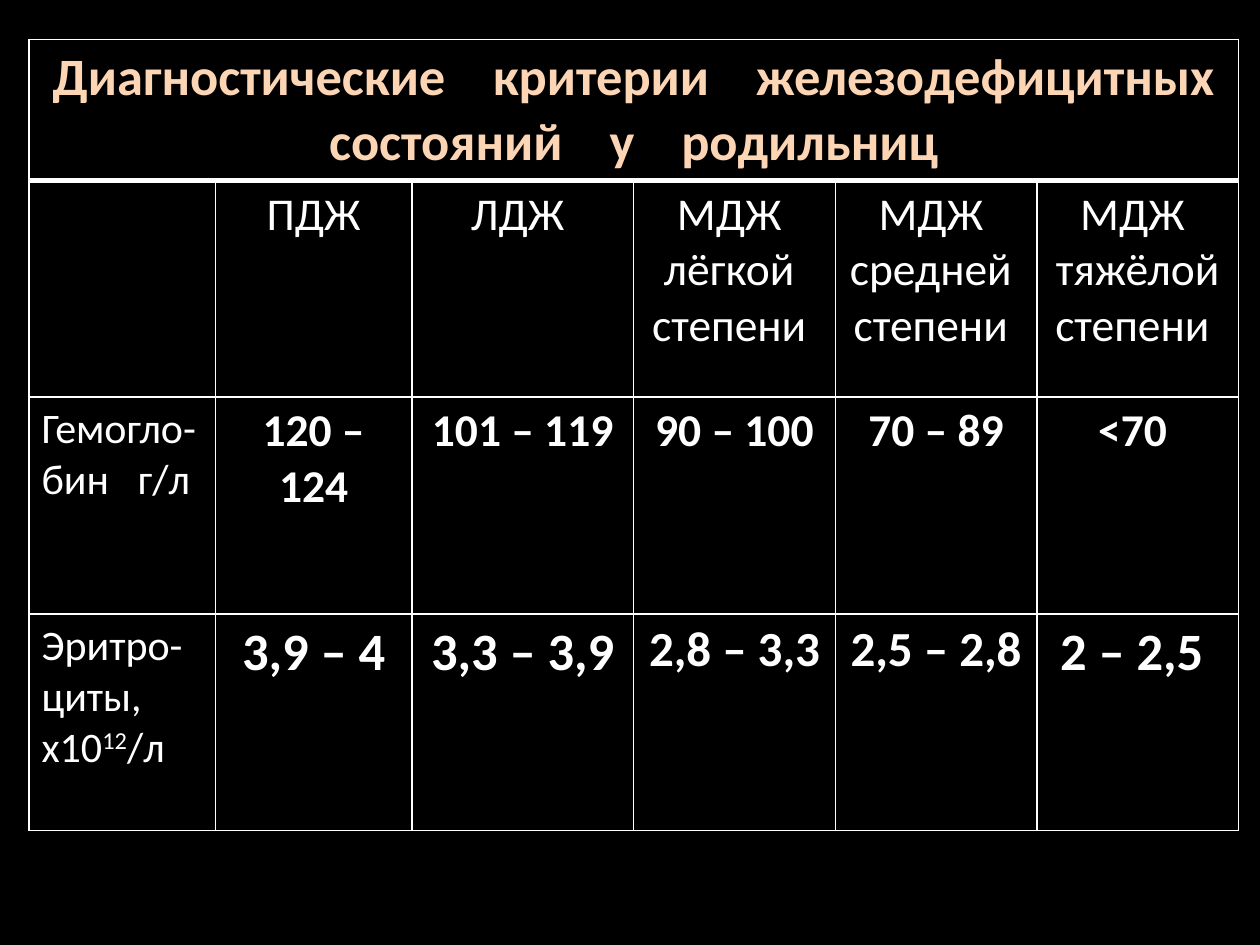
from lxml.etree import SubElement
from pptx import Presentation
from pptx.dml.color import RGBColor
from pptx.enum.text import PP_ALIGN
from pptx.oxml import parse_xml
from pptx.oxml.ns import nsdecls
from pptx.util import Inches, Pt

COLORS = {"back": "000000", "text": "FFFFFF", "title": "FCD5B5"}
TITLE = "Диагностические критерии железодефицитных состояний у родильниц"
HEADS = ["", " ПДЖ ", "ЛДЖ ", "МДЖ \nлёгкой \nстепени ",
         "МДЖ \nсредней \nстепени ", "МДЖ \nтяжёлой\nстепени "]
ROWS = [
    ([("Гемогло-бин", {}), (" ", {"spc": "1100"}), ("г/л", {})],
     ["120 –124", "101 – 119", "90 – 100", "70 – 89", "<70 "], [26] * 5),
    ([("Эритро-циты, х10", {}), ("12", {"baseline": "30000"}), ("/л", {})],
     ["3,9 – 4", "3,3 – 3,9", "2,8 – 3,3", "2,5 – 2,8", "2 – 2,5 "],
     [30, 30, 28, 28, 30]),
]
COLS = [1.48, 1.56, 1.76, 1.6, 1.6, 1.6]
HIGH = [1.1, 1.72, 1.72, 1.72]


def paint(cell, base=1):
    """Fill a cell and rule its four sides."""
    props = cell._tc.get_or_add_tcPr()
    for i, side in enumerate("LRTB"):
        width = Pt(base if side == "B" else 1)
        line = parse_xml(f'<a:ln{side} {nsdecls("a")} w="{width}"/>')
        fill = SubElement(line, line.tag.replace(f"ln{side}", "solidFill"))
        tone = SubElement(fill, line.tag.replace(f"ln{side}", "srgbClr"))
        tone.set("val", COLORS["text"])
        props.insert(i, line)
    cell.fill.solid()
    cell.fill.fore_color.rgb = RGBColor.from_string(COLORS["back"])


def style(para, size, bold, color="text", align=PP_ALIGN.CENTER):
    """Set the font and alignment of a paragraph."""
    para.alignment = align
    font = para.font
    font.name, font.size, font.bold = "Calibri", Pt(size), bold
    font.color.rgb = RGBColor.from_string(COLORS[color])


def write(cell, text, size, bold):
    """Write centred lines in a cell."""
    cell.text = text
    for para in cell.text_frame.paragraphs:
        style(para, size, bold)


def join(cell, parts, *look):
    """Write one paragraph from runs with their own attributes."""
    para = cell.text_frame.paragraphs[0]
    style(para, *look)
    for text, marks in parts:
        run = para.add_run()
        run.text = text
        for key, val in marks.items():
            run.font._element.set(key, val)


def add_grid(slide, left, top, width, height):
    """Place the table of criteria in the given box."""
    shape = slide.shapes.add_table(len(HIGH), len(COLS), left, top, width, height)
    table = shape.table
    for col, part in zip(table.columns, COLS):
        col.width = int(width * part / sum(COLS))
    for row, part in zip(table.rows, HIGH):
        row.height = int(height * part / sum(HIGH))
    for i, row in enumerate(table.rows):
        for cell in row.cells:
            paint(cell, 1 if i else 3)
    table.cell(0, 0).merge(table.cell(0, len(COLS) - 1))

    parts = []
    for word in TITLE.split():
        parts += [(" ", {"spc": "2000"}), (word, {})]
    join(table.cell(0, 0), parts[1:], 30, True, "title")
    for col, head in enumerate(HEADS):
        write(table.cell(1, col), head, 26, False)
    for row, (label, vals, sizes) in enumerate(ROWS, 2):
        join(table.cell(row, 0), label, 24, False, "text", PP_ALIGN.LEFT)
        for col, (val, size) in enumerate(zip(vals, sizes), 1):
            write(table.cell(row, col), val, size, True)


def main():
    """Build and save the slide."""
    deck = Presentation()
    deck.slide_width, deck.slide_height = Inches(10), Inches(7.5)
    slide = deck.slides.add_slide(deck.slide_layouts[6])
    back = slide.background.fill
    back.solid()
    back.fore_color.rgb = RGBColor.from_string(COLORS["back"])
    wide, high = deck.slide_width, deck.slide_height
    add_grid(slide, int(wide * 0.023), int(high * 0.042),
             Inches(sum(COLS)), Inches(sum(HIGH)))
    deck.save("out.pptx")


if __name__ == "__main__":
    main()
